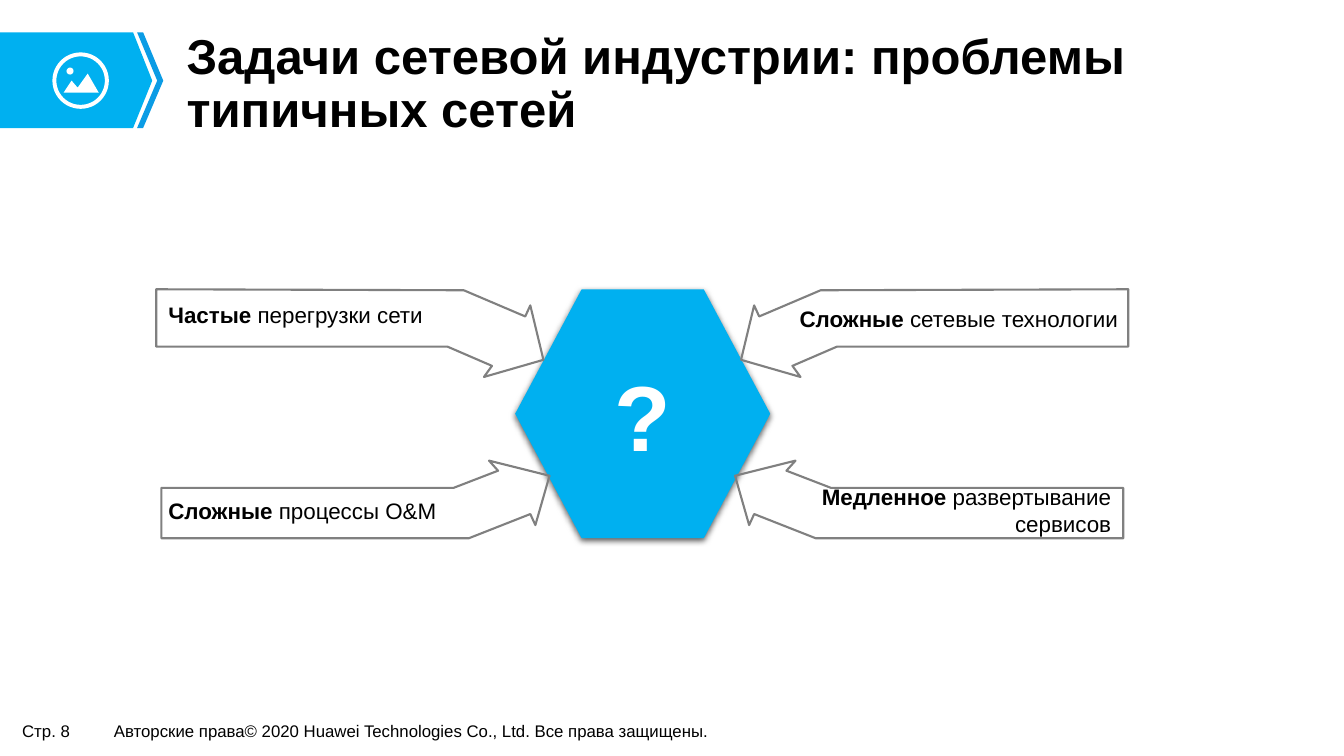
import pptx
import pptx.util
import pptx.oxml
import pptx.dml.color
import pptx.enum.shapes
import pptx.enum.text

Inches = pptx.util.Inches
Pt = pptx.util.Pt
RGBColor = pptx.dml.color.RGBColor
MSO_SHAPE = pptx.enum.shapes.MSO_SHAPE
PP_ALIGN = pptx.enum.text.PP_ALIGN
MSO_ANCHOR = pptx.enum.text.MSO_ANCHOR

BLACK = RGBColor(0x00, 0x00, 0x00)
WHITE = RGBColor(0xFF, 0xFF, 0xFF)
SKY = RGBColor(0x00, 0xB0, 0xF0)
AZURE = RGBColor(0x0B, 0x9C, 0xE5)
GRAY = RGBColor(0x80, 0x80, 0x80)

prs = pptx.Presentation()
prs.slide_width = Inches(13.33)
prs.slide_height = Inches(7.5)
s = prs.slides.add_slide(prs.slide_layouts[5])


def paint(sp, fill=None, line=None):
    sp.shadow.inherit = False
    if fill is None:
        sp.fill.background()
    else:
        sp.fill.solid()
        sp.fill.fore_color.rgb = fill
    if line is None:
        sp.line.fill.background()
    else:
        sp.line.color.rgb = line
        sp.line.width = Pt(1.5)


def write(sp, box, runs, size, color=BLACK, align=PP_ALIGN.LEFT,
          anchor=MSO_ANCHOR.MIDDLE, margins=(0, 0), wrap=True):
    sp.left, sp.top, sp.width, sp.height = [Inches(v) for v in box]
    tf = sp.text_frame
    x, y = [Inches(v) for v in margins]
    frame = {"auto_size": pptx.enum.text.MSO_AUTO_SIZE.NONE, "word_wrap": wrap,
             "vertical_anchor": anchor, "margin_left": x, "margin_right": x,
             "margin_top": y, "margin_bottom": y}
    for name, value in frame.items():
        setattr(tf, name, value)
    p = tf.paragraphs[0]
    p.alignment = align
    for text, bold in runs:
        r = p.add_run()
        r.text = text
        for name, value in {"name": "Arial", "size": Pt(size), "bold": bold}.items():
            setattr(r.font, name, value)
        r.font.color.rgb = color
    return p


p = write(s.shapes.title, (1.74, 0.49, 10.75, 0.7),
          [("Задачи сетевой индустрии: проблемы типичных сетей", True)],
          35, margins=(0.11, 0.06))
p.line_spacing = 0.9

footers = [
    ((0.13, 7.11, 0.77, 0.29), "Стр. 8"),
    ((1.04, 7.11, 6.36, 0.29),
     "Авторские права© 2020 Huawei Technologies Co., Ltd. Все права защищены."),
]
for box, text in footers:
    write(s.shapes.add_textbox(0, 0, 0, 0), box, [(text, False)], 12,
          anchor=MSO_ANCHOR.TOP, margins=(0.09, 0.04), wrap=False)

banner = [(0, 0.32), (1.32, 0.32), (1.51, 0.8), (1.32, 1.27), (0, 1.27)]
chevron = [(1.36, 0.32), (1.42, 0.32), (1.62, 0.8), (1.42, 1.27), (1.36, 1.27), (1.56, 0.8)]
mountains = [(0.63, 0.92), (0.71, 0.8), (0.77, 0.87), (0.87, 0.73), (0.98, 0.92)]
upper_arrow = [(1.55, 3.44), (4.44, 3.44), (4.88, 3.63), (4.8, 3.74), (5.39, 3.57),
               (5.26, 3.03), (5.21, 3.14), (4.6, 2.88), (1.55, 2.87)]
lower_arrow = [(1.6, 4.84), (4.5, 4.84), (4.94, 4.67), (4.85, 4.57), (5.45, 4.72),
               (5.31, 5.21), (5.26, 5.1), (4.65, 5.34), (1.6, 5.34)]

sp = s.shapes.add_shape(MSO_SHAPE.HEXAGON, Inches(5.11), Inches(2.87), Inches(2.53), Inches(2.47))
sp.adjustments[0] = 0.267
sp.adjustments[1] = 1.155
paint(sp, SKY)
effects = sp._element.spPr.find(pptx.oxml.ns.qn("a:effectLst"))
effects.append(pptx.oxml.parse_xml(
    '<a:outerShdw xmlns:a="http://schemas.openxmlformats.org/drawingml/2006/main" '
    'blurRad="57150" dist="19050" dir="5400000" algn="ctr" rotWithShape="0">'
    '<a:srgbClr val="000000"><a:alpha val="63000"/></a:srgbClr></a:outerShdw>'))

outlines = [(banner, SKY, None), (chevron, AZURE, None), (mountains, WHITE, None)]
for arrow in (upper_arrow, lower_arrow):
    mirrored = [(12.74 - x, y) for x, y in arrow]
    outlines += [(arrow, None, GRAY), (mirrored, None, GRAY)]
for points, fill, line in outlines:
    corners = [(Inches(x), Inches(y)) for x, y in points]
    builder = s.shapes.build_freeform(*corners[0])
    builder.add_line_segments(corners[1:], close=True)
    paint(builder.convert_to_shape(), fill, line)

ring = s.shapes.add_shape(MSO_SHAPE.DONUT, Inches(0.52), Inches(0.52), Inches(0.56), Inches(0.56))
ring.adjustments[0] = 0.07
sun = s.shapes.add_shape(MSO_SHAPE.OVAL, Inches(0.66), Inches(0.67), Inches(0.07), Inches(0.07))
for sp in (ring, sun):
    paint(sp, WHITE)

write(s.shapes.add_textbox(0, 0, 0, 0), (5.31, 3.97, 2.12, 0.28),
      [("?", True)], 66, WHITE, PP_ALIGN.CENTER)

problems = [
    ((1.67, 2.86, 3.24, 0.52), "Частые", " перегрузки сети", PP_ALIGN.LEFT),
    ((1.67, 4.81, 2.88, 0.52), "Сложные", " процессы O&M", PP_ALIGN.LEFT),
    ((7.81, 2.9, 3.28, 0.52), "Сложные", " сетевые технологии", PP_ALIGN.RIGHT),
    ((7.63, 4.79, 3.39, 0.54), "Медленное", " развертывание сервисов", PP_ALIGN.RIGHT),
]
for box, lead, rest, align in problems:
    write(s.shapes.add_textbox(0, 0, 0, 0), box, [(lead, True), (rest, False)], 16, align=align)

prs.save("out.pptx")
